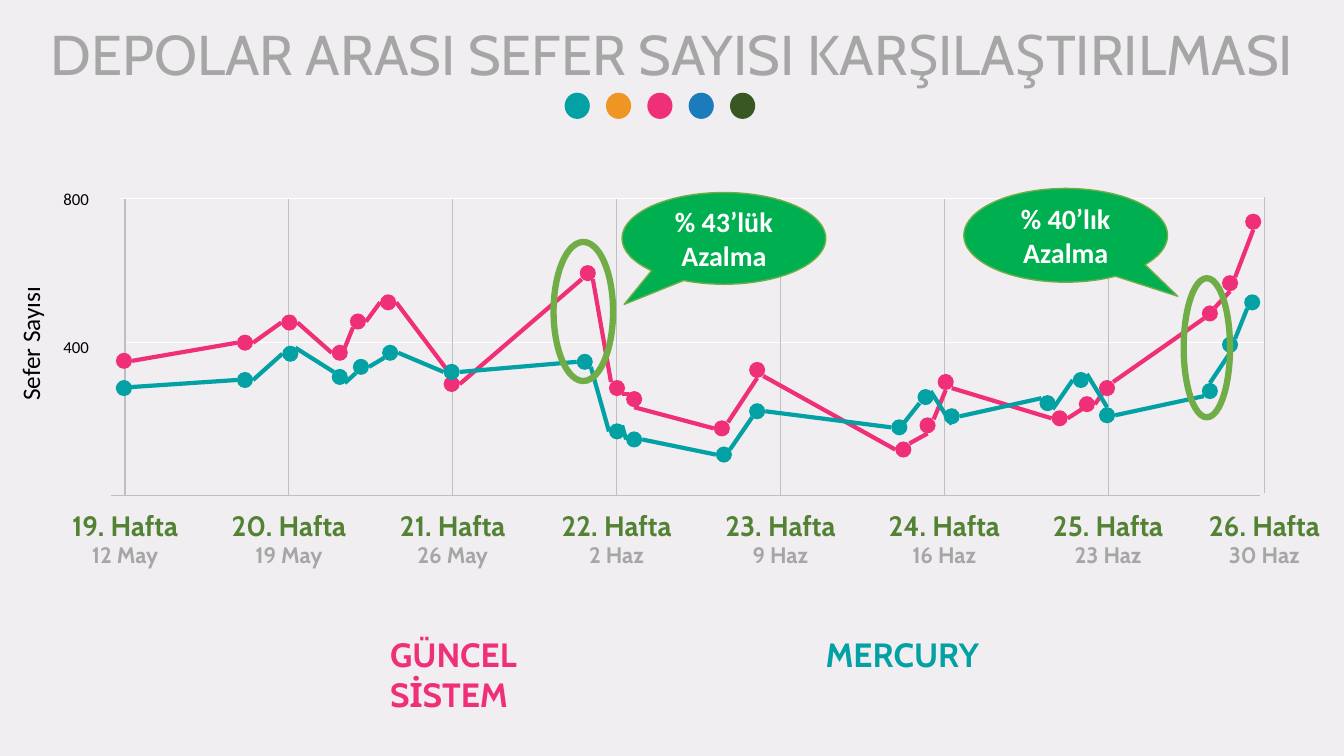
from lxml import etree
from pptx import Presentation
from pptx.dml.color import RGBColor
from pptx.enum.shapes import MSO_CONNECTOR as Connector, MSO_SHAPE as Shape
from pptx.enum.text import MSO_ANCHOR as Anchor, PP_ALIGN as Align
from pptx.oxml.ns import qn
from pptx.util import Inches, Pt

BACKGROUND = RGBColor(0xF0, 0xEE, 0xF0)
GRID = RGBColor(0xBF, 0xBF, 0xBF)
WHITE = RGBColor(0xFF, 0xFF, 0xFF)
BLACK = RGBColor(0x00, 0x00, 0x00)
GRAY = RGBColor(0xA6, 0xA6, 0xA6)
PINK = RGBColor(0xEF, 0x30, 0x78)
TEAL = RGBColor(0x03, 0xA1, 0xA4)
ORANGE = RGBColor(0xEE, 0x95, 0x24)
BLUE = RGBColor(0x1C, 0x7C, 0xBB)
DARK_GREEN = RGBColor(0x38, 0x57, 0x23)
WEEK_GREEN = RGBColor(0x54, 0x82, 0x35)
RING_GREEN = RGBColor(0x70, 0xAD, 0x47)
CALLOUT_GREEN = RGBColor(0x00, 0xB0, 0x50)

DOT = 0.16
TICK_START, TICK_STEP = 1.24, 1.625
LAST_TICK = 12.54

WEEKS = [
    ("19. Hafta", "12 May"), ("20. Hafta", "19 May"), ("21. Hafta", "26 May"),
    ("22. Hafta", "2 Haz"), ("23. Hafta", "9 Haz"), ("24. Hafta", "16 Haz"),
    ("25. Hafta", "23 Haz"), ("26. Hafta", "30 Haz"),
]

CURRENT_DOTS = [
    (1.15, 3.5), (2.35, 3.32), (2.79, 3.12), (3.29, 3.42), (3.47, 3.11), (3.77, 2.92),
    (4.4, 3.73), (5.75, 2.63), (6.04, 3.77), (6.21, 3.88), (7.08, 4.17), (7.43, 3.59),
    (8.88, 4.38), (9.12, 4.14), (9.3, 3.71), (10.43, 4.07), (10.7, 3.93), (10.9, 3.77),
    (11.92, 3.03), (12.12, 2.73), (12.35, 2.12),
]
CURRENT_SEGMENTS = [
    (1.31, 3.58, 2.35, 3.4), (2.51, 3.4, 2.79, 3.2), (2.95, 3.2, 3.29, 3.5),
    (3.42, 3.45, 3.5, 3.25), (3.63, 3.19, 3.77, 3), (4.48, 3.73, 3.93, 3),
    (5.77, 2.77, 4.56, 3.81), (6.06, 3.79, 5.88, 2.77), (6.24, 3.91, 6.17, 3.91),
    (7.08, 4.25, 6.29, 4.04), (7.51, 3.75, 7.22, 4.19), (7.57, 3.73, 8.88, 4.46),
    (9.02, 4.4, 9.2, 4.3), (9.38, 3.87, 9.26, 4.16), (9.44, 3.85, 10.43, 4.15),
    (10.59, 4.15, 10.73, 4.06), (10.93, 3.91, 10.86, 4.01), (11.94, 3.16, 11.04, 3.79),
    (12.2, 2.89, 12.05, 3.05), (12.43, 2.28, 12.25, 2.75),
]
MERCURY_DOTS = [
    (1.15, 3.77), (2.35, 3.69), (2.8, 3.43), (3.29, 3.66), (3.5, 3.56), (3.79, 3.42),
    (4.4, 3.61), (5.72, 3.51), (6.04, 4.2), (6.21, 4.28), (7.1, 4.43), (7.43, 4),
    (8.84, 4.16), (9.1, 3.86), (9.36, 4.05), (10.31, 3.92), (10.64, 3.69), (10.9, 4.04),
    (11.92, 3.8), (12.12, 3.34), (12.34, 2.92),
]
MERCURY_SEGMENTS = [
    (1.15, 3.85, 2.35, 3.77), (2.8, 3.51, 2.51, 3.77), (3.31, 3.69, 2.93, 3.45),
    (3.53, 3.7, 3.42, 3.8), (3.81, 3.55, 3.66, 3.64), (3.95, 3.5, 4.4, 3.69),
    (5.72, 3.59, 4.56, 3.69), (6.04, 4.28, 5.86, 3.64), (6.21, 4.36, 6.17, 4.22),
    (7.1, 4.51, 6.37, 4.36), (7.46, 4.14, 7.24, 4.46), (8.84, 4.24, 7.59, 4.08),
    (9.12, 4, 8.97, 4.19), (9.44, 4.21, 9.23, 3.88), (9.52, 4.13, 10.33, 3.95),
    (10.44, 4.06, 10.64, 3.77), (10.78, 3.71, 10.98, 4.04), (11.06, 4.12, 11.94, 3.93),
    (12.2, 3.5, 12, 3.8), (12.37, 3.06, 12.25, 3.36),
]


class SlideBuilder:
    heading_font = "Cabin"
    body_font = "Calibri"

    def __init__(self, page):
        self.page = page
        page.background.fill.solid()
        page.background.fill.fore_color.rgb = BACKGROUND

    def line(self, ends, color, width=0.75):
        line = self.page.shapes.add_connector(Connector.STRAIGHT, *map(Inches, ends))
        line.line.color.rgb = color
        line.line.width = Pt(width)
        etree.SubElement(line._element.spPr, qn("a:effectLst"))

    def shape(self, kind, place, fill=None, outline=None, width=1):
        shape = self.page.shapes.add_shape(kind, *map(Inches, place))
        shape.shadow.inherit = False
        if fill is None:
            shape.fill.background()
        else:
            shape.fill.solid()
            shape.fill.fore_color.rgb = fill
        if outline is None:
            shape.line.fill.background()
        else:
            shape.line.color.rgb = outline
            shape.line.width = Pt(width)
        return shape

    def add_words(self, box, text, size, color, font, bold=False, align=Align.CENTER):
        box.text_frame.word_wrap = True
        para = box.text_frame.paragraphs[0]
        para.alignment = align
        span = para.add_run()
        span.text = text
        span.font.name = font
        span.font.size = Pt(size)
        span.font.bold = bold
        span.font.color.rgb = color
        return para

    def text(self, place, *content, rotation=0, indent=0, **style):
        box = self.page.shapes.add_textbox(*map(Inches, place))
        box.rotation = rotation
        para = self.add_words(box, *content, **style)
        if indent:
            para._p.get_or_add_pPr().set("marL", str(Inches(indent)))

    def callout(self, place, tail, text):
        bubble = self.shape(Shape.OVAL_CALLOUT, place, CALLOUT_GREEN, RING_GREEN)
        bubble.adjustments[0], bubble.adjustments[1] = tail
        bubble.text_frame.vertical_anchor = Anchor.MIDDLE
        self.add_words(bubble, text, 20, WHITE, self.body_font, bold=True)

    def series(self, segments, dots, color):
        for ends in segments:
            self.line(ends, color, 3)
        for left, top in dots:
            self.shape(Shape.OVAL, (left, top, DOT, DOT), color)


def main():
    deck = Presentation()
    deck.slide_width, deck.slide_height = Inches(13.33), Inches(7.5)
    slide = SlideBuilder(deck.slides.add_slide(deck.slide_layouts[6]))
    cabin, calibri = slide.heading_font, slide.body_font

    slide.line((1.1, 4.92, 12.5, 4.92), GRID)
    slide.line((1.24, 3.4, 12.55, 3.4), WHITE)
    ticks = [TICK_START + TICK_STEP * index for index in range(len(WEEKS) - 1)]
    for tick in ticks:
        slide.line((tick, 4.92, tick, 1.97), GRID)
    slide.line((1.19, 1.97, 12.55, 1.97), WHITE)
    slide.line((LAST_TICK, 4.89, LAST_TICK, 1.95), GRID)

    for tick, (week, date) in zip(ticks + [LAST_TICK], WEEKS):
        slide.text((tick - 0.74, 5, 1.48, 0.44), week, 20, WEEK_GREEN, cabin, bold=True)
        slide.text((tick - 0.9, 5.32, 1.8, 0.37), date, 16, GRAY, cabin, bold=True)

    slide.text((-2.22, 3.21, 5.04, 0.4), "Sefer Sayısı", 18, BLACK, calibri, rotation=270)
    for label, top in (("800", 1.82), ("400", 3.29)):
        slide.text((0.53, top, 0.62, 0.3), label, 12, BLACK, calibri, align=Align.LEFT)

    slide.series(CURRENT_SEGMENTS, CURRENT_DOTS, PINK)
    slide.series(MERCURY_SEGMENTS, MERCURY_DOTS, TEAL)

    for place in ((5.49, 2.4, 0.59, 1.38), (11.74, 2.76, 0.46, 1.38)):
        slide.shape(Shape.OVAL, place, outline=RING_GREEN, width=4.5)
    slide.callout((6.17, 1.91, 2.02, 0.91), (-0.49, 0.72), "% 43’lük Azalma")
    slide.callout((9.56, 1.87, 2.02, 0.93), (0.55, 0.65), "% 40’lık Azalma")

    slide.text((3.27, 6.24, 3.18, 0.5), "GÜNCEL SİSTEM", 24, PINK, cabin,
               bold=True, align=Align.LEFT, indent=0.5)
    slide.text((8.09, 6.24, 1.82, 0.5), "MERCURY", 24, TEAL, cabin,
               bold=True, align=Align.LEFT)

    slide.text((0, 0.14, 13.33, 0.77), "DEPOLAR ARASI SEFER SAYISI KARŞILAŞTIRILMASI",
               40, GRAY, cabin)
    for index, color in enumerate((TEAL, ORANGE, PINK, BLUE, DARK_GREEN)):
        slide.shape(Shape.OVAL, (5.6 + 0.41 * index, 0.92, 0.25, 0.26), color)

    deck.save("out.pptx")


if __name__ == "__main__":
    main()
